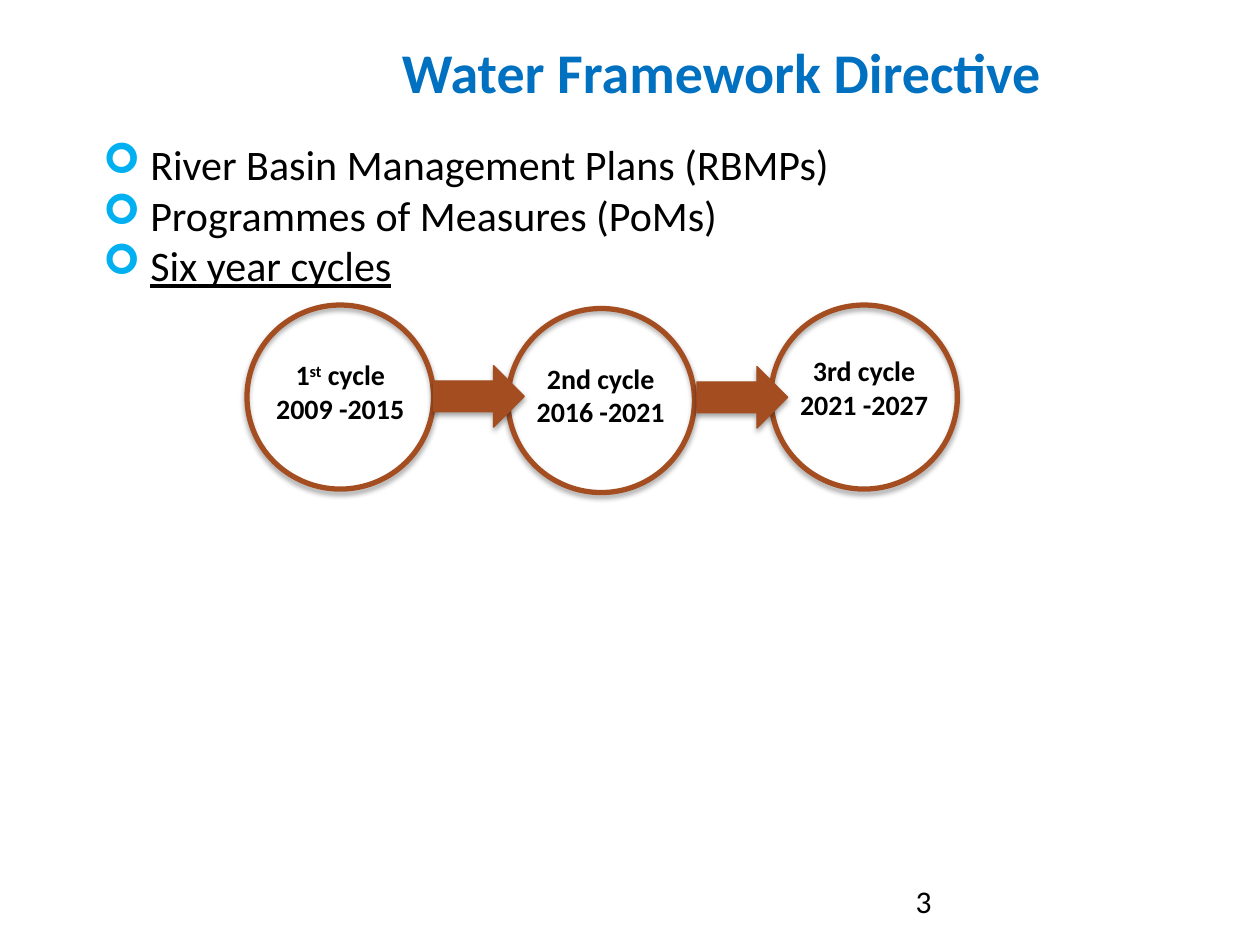
"""Build a slide on the planning cycles of the Water Framework Directive."""
from lxml import etree
from pptx import Presentation
from pptx import util as u
from pptx.dml.color import RGBColor
from pptx.enum import shapes, text
from pptx.oxml import parse_xml
from pptx.oxml.ns import nsdecls, qn

RUST = "A34D21"
SHADOW = (
    f'<a:effectLst {nsdecls("a")}><a:outerShdw blurRad="39370" dist="22860" dir="5400000" '
    'rotWithShape="0"><a:srgbClr val="000000"><a:alpha val="35000"/></a:srgbClr>'
    "</a:outerShdw></a:effectLst>"
)


def add_outlined(kind, box, line_width):
    shape = slide.shapes.add_shape(kind, *map(u.Cm, box))
    shape.line.color.rgb = RGBColor.from_string(RUST)
    shape.line.width = u.Pt(line_width)
    shape._element.spPr.append(parse_xml(SHADOW))
    return shape


def add_text(box, lines, size, color="000000", bold=False, align=None, bullet=None, grow=True):
    frame = slide.shapes.add_textbox(*map(u.Cm, box)).text_frame
    frame.word_wrap = True
    if grow:
        frame.auto_size = text.MSO_AUTO_SIZE.SHAPE_TO_FIT_TEXT
    for number, line in enumerate(lines):
        paragraph = frame.add_paragraph() if number else frame.paragraphs[0]
        paragraph.alignment = align
        if bullet:
            props = paragraph._p.get_or_add_pPr()
            props.set("marL", str(u.Cm(0.95)))
            props.set("indent", str(-u.Cm(0.95)))
            bullet_color = etree.SubElement(props, qn("a:buClr"))
            etree.SubElement(bullet_color, qn("a:srgbClr"), val=bullet)
            etree.SubElement(props, qn("a:buFont"), typeface="Wingdings")
            etree.SubElement(props, qn("a:buChar"), char="➢")
        for part, extra in line:
            run = paragraph.add_run()
            run.text = part
            formats = {"name": "Calibri", "size": u.Pt(size), "bold": bold}
            for key, value in formats.items():
                setattr(run.font, key, value)
            run.font.color.rgb = RGBColor.from_string(color)
            for key, value in extra.items():
                run._r.get_or_add_rPr().set(key, value)


deck = Presentation()
deck.slide_width, deck.slide_height = u.Cm(25.4), u.Cm(19.05)
slide = deck.slides.add_slide(deck.slide_layouts[6])

for left, top in ((4.98, 6.15), (15.54, 6.15), (10.24, 6.22)):
    cycle = add_outlined(shapes.MSO_SHAPE.OVAL, (left, top, 3.76, 3.71), 3)
    cycle.fill.background()

first_cycle = [("1", {}), ("st", {"baseline": "30000"}), (" cycle", {})]
captions = (
    (10.46, 7.16, [("2nd cycle", {})], "2016 -2021"),
    (5.21, 7.09, first_cycle, "2009 -2015"),
    (15.77, 7.01, [("3rd cycle", {})], "2021 -2027"),
)
for left, top, cycle_name, years in captions:
    add_text((left, top, 3.3, 1.63), [cycle_name, [(years, {})]], 16,
             bold=True, align=text.PP_ALIGN.CENTER)

for left, top in ((8.74, 7.37), (14.05, 7.39)):
    step = add_outlined(shapes.MSO_SHAPE.RIGHT_ARROW, (left, top, 1.83, 1.24), 0.75)
    step.fill.solid()
    step.fill.fore_color.rgb = RGBColor.from_string(RUST)

topics = [
    [("River Basin Management Plans (RBMPs)", {})],
    [("Programmes of Measures (PoMs)", {})],
    [("Six year cycles", {"u": "sng"})],
]
add_text((1.83, 2.67, 16.84, 3.33), topics, 24, bullet="00B0F0")
add_text((7.85, 0.64, 14.17, 1.63), [[("Water Framework Directive", {})]], 32, "0070C0", bold=True)
add_text((18.21, 17.65, 5.92, 1.02), [[("3", {})]], 18, grow=False)

deck.save("out.pptx")
